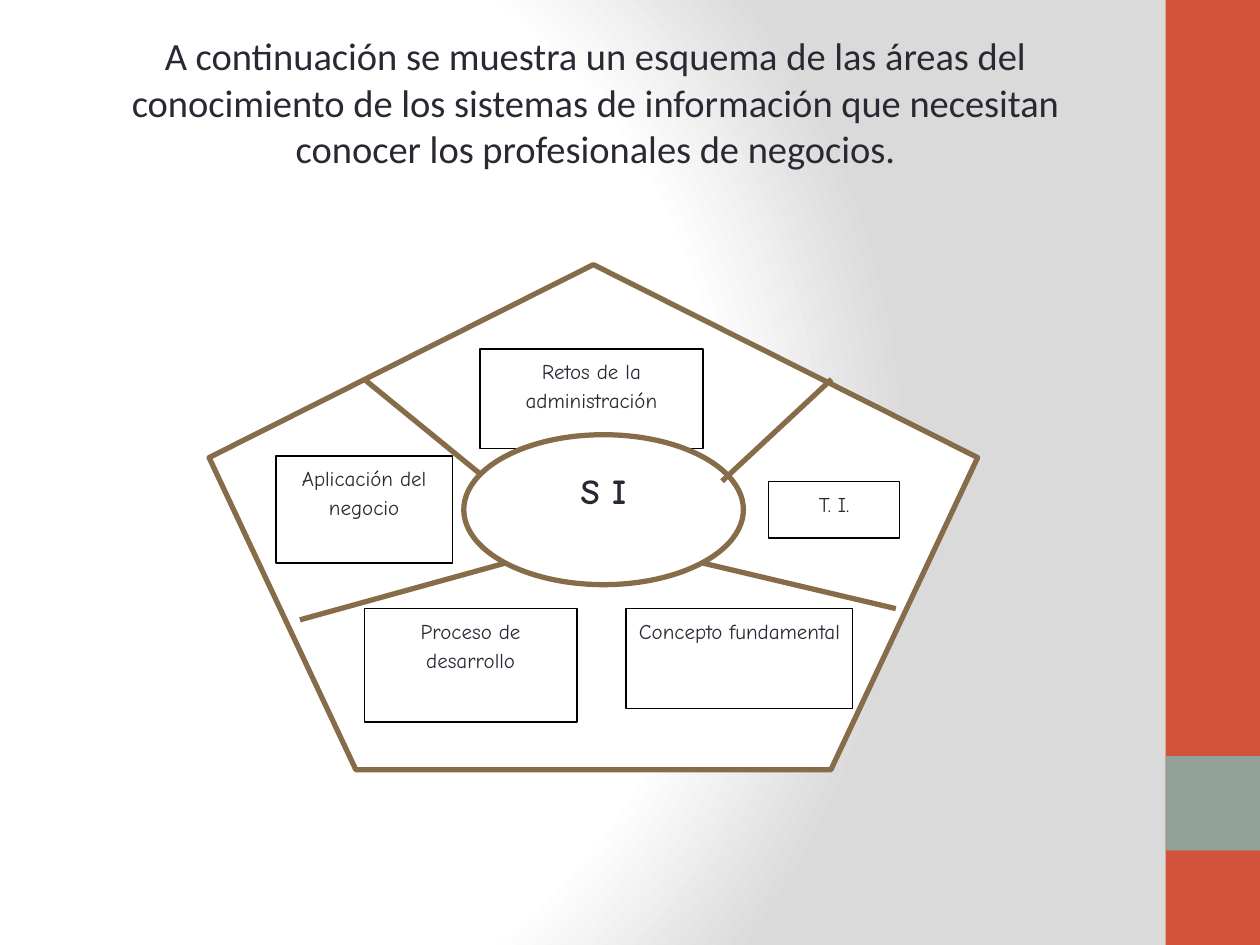
from lxml.etree import SubElement
from pptx import Presentation
from pptx.dml.color import RGBColor
from pptx.enum.shapes import MSO_CONNECTOR, MSO_SHAPE
from pptx.enum.text import MSO_ANCHOR, PP_ALIGN
from pptx.oxml import parse_xml
from pptx.oxml.ns import nsdecls, qn
from pptx.util import Pt

TITLE = ("A continuación se muestra un esquema de las áreas del conocimiento de los "
         "sistemas de información que necesitan conocer los profesionales de negocios.")
INK, BROWN, WHITE, BLACK = "292934", "866C49", "FFFFFF", "000000"
RED, SAGE, GREY = "D2533C", "93A299", "DADADA"

# Places are left, top, width, height in points
SIDE_BARS = [((666, 0, 54, 540), RED), ((666, 432, 54, 54), SAGE)]
PENTAGON = (119.5, 151.2, 439.2, 288.7)
CENTRE = ("S I", (265, 248.4, 159.8, 85.7))
AREAS = [
    ("Aplicación del negocio", (157.7, 260.6, 100.8, 61.2)),
    ("Retos de la administración", (274.3, 199.4, 127.4, 56.9)),
    ("T. I.", (439.2, 275, 74.9, 32.4)),
    ("Proceso de desarrollo", (208.1, 347.8, 121.7, 64.8)),
    ("Concepto fundamental", (357.8, 347.8, 129.6, 56.9)),
]
# Spokes are x1, y1, x2, y2; the first runs behind the ellipse
BACK_SPOKE = (208.1, 216.7, 298.1, 290.2)
FRONT_SPOKES = [
    (412.6, 275, 475.2, 216.7),
    (401.8, 321.8, 511.9, 347.8),
    (288.7, 321.8, 171.4, 354.2),
]


def rgb(color):
    return RGBColor.from_string(color)


def add_box(shapes, kind, place, fill, line=None, width=0.75):
    sp = shapes.add_shape(kind, *map(Pt, place))
    sp.shadow.inherit = False
    sp.fill.solid()
    sp.fill.fore_color.rgb = rgb(fill)
    if line:
        sp.line.color.rgb = rgb(line)
        sp.line.width = Pt(width)
    else:
        sp.line.fill.background()
    return sp


def write(sp, text, font, size, bold=False):
    tf = sp.text_frame
    tf.word_wrap = True
    tf.vertical_anchor = MSO_ANCHOR.TOP
    tf.text = text
    p = tf.paragraphs[0]
    p.alignment = PP_ALIGN.CENTER
    r = p.runs[0]
    r.font.name, r.font.size, r.font.bold = font, Pt(size), bold
    r.font.color.rgb = rgb(INK)
    return p


def write_label(sp, text, size=12, bold=False):
    p = write(sp, text, "Comic Neue", size, bold)
    p.line_spacing = 1.15
    p.space_after = Pt(10)


def add_spoke(shapes, ends):
    line = shapes.add_connector(MSO_CONNECTOR.STRAIGHT, *map(Pt, ends))
    line.line.color.rgb = rgb(BROWN)
    line.line.width = Pt(3)
    SubElement(line._element.spPr, qn("a:effectLst"))


prs = Presentation()
prs.slide_width, prs.slide_height = Pt(720), Pt(540)
s = prs.slides.add_slide(prs.slide_layouts[6])

# Background: radial gradient
s.background.fill.solid()
bg = s.background._cSld.bg.bgPr
stops = "".join(f'<a:gs pos="{pos * 1000}"><a:srgbClr val="{color}"/></a:gs>'
                for pos, color in [(0, WHITE), (75, WHITE), (100, GREY)])
bg.replace(bg.find(qn("a:solidFill")), parse_xml(
    f'<a:gradFill rotWithShape="1" {nsdecls("a")}><a:gsLst>{stops}</a:gsLst><a:path path="circle">'
    '<a:fillToRect l="20000" t="50000" r="100000" b="50000"/></a:path></a:gradFill>'))

# Side bars
for place, color in SIDE_BARS:
    add_box(s.shapes, MSO_SHAPE.RECTANGLE, place, color)

# Title
title = s.shapes.add_textbox(Pt(36), Pt(15), Pt(600), Pt(90))
p = write(title, TITLE, "Calibri", 22)
p.space_before = Pt(4.4)
p._p.get_or_add_pPr().set("marL", str(Pt(8.64)))

# Diagram, from back to front
diagram = s.shapes.add_group_shape().shapes
add_box(diagram, MSO_SHAPE.REGULAR_PENTAGON, PENTAGON, WHITE, BROWN, 3)
for text, place in AREAS:
    write_label(add_box(diagram, MSO_SHAPE.RECTANGLE, place, WHITE, BLACK), text)
add_spoke(diagram, BACK_SPOKE)
text, place = CENTRE
write_label(add_box(diagram, MSO_SHAPE.OVAL, place, WHITE, BROWN, 3), text, 20, True)
for ends in FRONT_SPOKES:
    add_spoke(diagram, ends)

prs.save("out.pptx")
